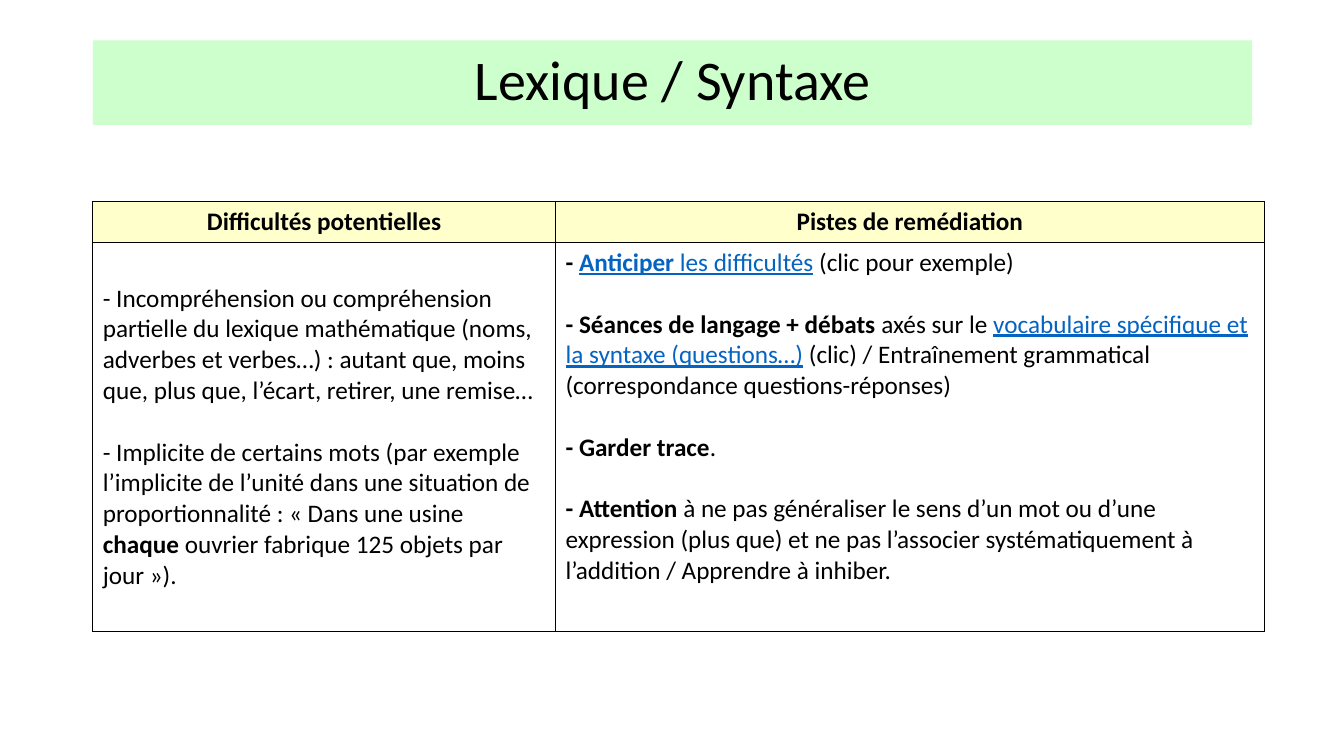
from lxml.etree import SubElement
from pptx import Presentation
from pptx.dml.color import RGBColor
from pptx.enum.text import MSO_ANCHOR as Anchor, MSO_AUTO_SIZE as AutoSize, PP_ALIGN as Align
from pptx.oxml.ns import qn
from pptx.util import Inches, Pt

BLACK = RGBColor(0x00, 0x00, 0x00)
WHITE = RGBColor(0xFF, 0xFF, 0xFF)
GREEN = RGBColor(0xCC, 0xFF, 0xCC)
YELLOW = RGBColor(0xFF, 0xFF, 0xCC)
BLUE = RGBColor(0x05, 0x63, 0xC1)

FONT = "Calibri"
PARAGRAPH_GAP = Pt(22)
BOLD = {"bold": True}
LINK = {"color": BLUE, "underline": True}

HEADINGS = ["Difficultés potentielles", "Pistes de remédiation"]
DIFFICULTIES = [
    [("- Incompréhension ou compréhension partielle du lexique mathématique "
      "(noms, adverbes et verbes…) : autant que, moins que, plus que, l’écart, "
      "retirer, une remise…", {})],
    [("- Implicite de certains mots (par exemple l’implicite de l’unité dans une "
      "situation de proportionnalité : « Dans une usine ", {}),
     ("chaque", BOLD),
     (" ouvrier fabrique 125 objets par jour »).", {})],
]
REMEDIES = [
    [("- ", BOLD), ("Anticiper", BOLD | LINK), (" les difficultés", LINK),
     (" (clic pour exemple)", {})],
    [("- Séances de langage + débats", BOLD), (" axés sur le ", {}),
     ("vocabulaire spécifique et la syntaxe (questions…)", LINK),
     (" (clic) / Entraînement grammatical (correspondance questions-réponses)", {})],
    [("- Garder trace", BOLD), (".", {})],
    [("- Attention", BOLD),
     (" à ne pas généraliser le sens d’un mot ou d’une expression (plus que) et ne "
      "pas l’associer systématiquement à l’addition / Apprendre à inhiber.", {})],
]


def add_text(paragraph, text, size=18, bold=False, underline=False, color=BLACK):
    run = paragraph.add_run()
    run.text = text
    run.font.name = FONT
    run.font.size = Pt(size)
    run.font.bold = bold
    run.font.underline = underline
    run.font.color.rgb = color


def add_borders(cell):
    properties = cell._tc.get_or_add_tcPr()
    for side in ("lnL", "lnR", "lnT", "lnB"):
        line = SubElement(properties, qn(f"a:{side}"), w=str(Pt(1)))
        fill = SubElement(line, qn("a:solidFill"))
        SubElement(fill, qn("a:srgbClr"), val=str(BLACK))


def fill_cell(cell, paragraphs, color, align=Align.LEFT, anchor=Anchor.MIDDLE):
    add_borders(cell)
    cell.fill.solid()
    cell.fill.fore_color.rgb = color
    cell.vertical_anchor = anchor
    frame = cell.text_frame
    for index, runs in enumerate(paragraphs):
        paragraph = frame.add_paragraph() if index else frame.paragraphs[0]
        paragraph.alignment = align
        if index:
            paragraph.space_before = PARAGRAPH_GAP
        for text, style in runs:
            add_text(paragraph, text, **style)


def place_title(slide, left, top, width, height):
    title = slide.shapes.title
    title.left, title.top, title.width, title.height = left, top, width, height
    title.fill.solid()
    title.fill.fore_color.rgb = GREEN
    frame = title.text_frame
    frame.auto_size = AutoSize.NONE
    frame.vertical_anchor = Anchor.MIDDLE
    paragraph = frame.paragraphs[0]
    paragraph.alignment = Align.CENTER
    paragraph.line_spacing = 0.9
    add_text(paragraph, "Lexique / Syntaxe", size=40)


def add_remedy_table(slide, left, top, width, height):
    table = slide.shapes.add_table(2, 2, left, top, width, height).table
    table.first_row = False
    table.horz_banding = False
    table.columns[0].width = Inches(4.59)
    table.columns[1].width = width - Inches(4.59)
    table.rows[0].height = Inches(0.4)
    table.rows[1].height = height - Inches(0.4)
    for column, heading in enumerate(HEADINGS):
        fill_cell(table.cell(0, column), [[(heading, BOLD)]], YELLOW, Align.CENTER)
    fill_cell(table.cell(1, 0), DIFFICULTIES, WHITE)
    fill_cell(table.cell(1, 1), REMEDIES, WHITE, anchor=Anchor.TOP)


def main():
    presentation = Presentation()
    presentation.slide_width = Inches(13.33)
    presentation.slide_height = Inches(7.5)
    slide = presentation.slides.add_slide(presentation.slide_layouts[5])
    place_title(slide, Inches(0.92), Inches(0.4), Inches(11.5), Inches(0.84))
    add_remedy_table(slide, Inches(0.92), Inches(2), Inches(11.62), Inches(4.26))
    presentation.save("out.pptx")


if __name__ == "__main__":
    main()
